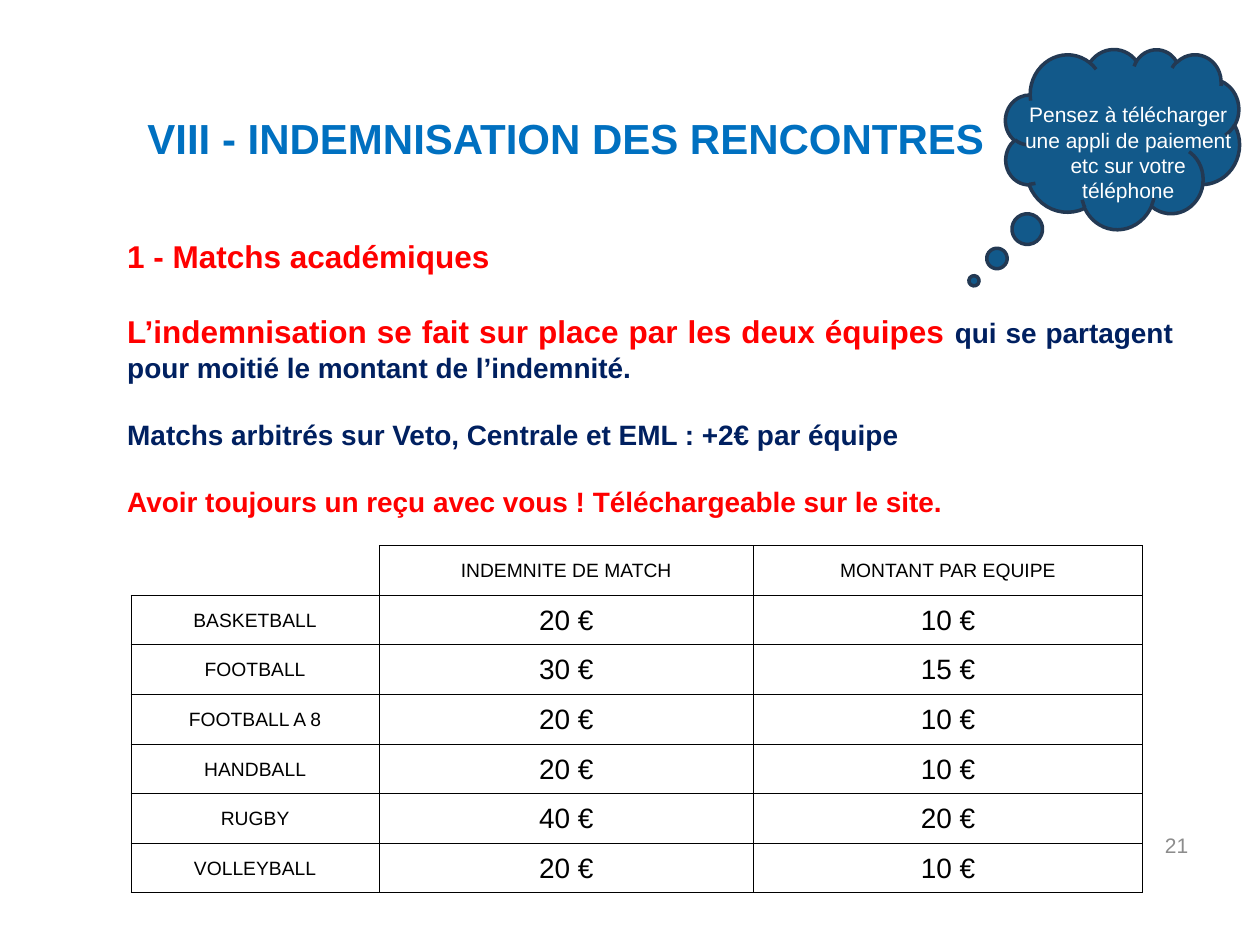
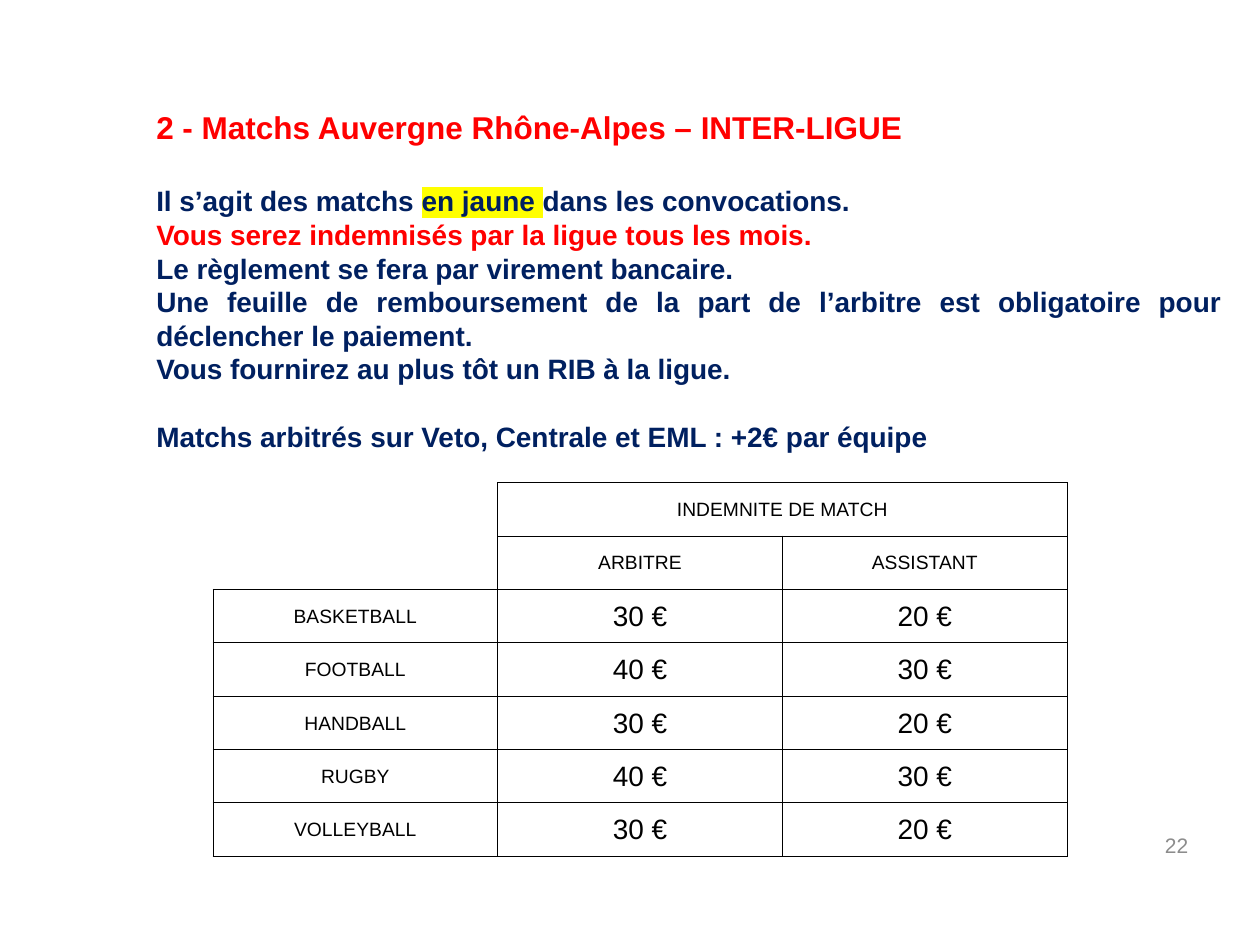
import lxml.etree
import pptx
import pptx.dml.color
import pptx.enum.shapes
import pptx.enum.text
import pptx.oxml.ns
import pptx.util
from dataclasses import dataclass

Inches = pptx.util.Inches
Pt = pptx.util.Pt
qn = pptx.oxml.ns.qn
Align = pptx.enum.text.PP_ALIGN
Anchor = pptx.enum.text.MSO_ANCHOR


@dataclass(frozen=True)
class Theme:
    font: str = "Arial"
    title_blue: str = "0070C0"
    red: str = "FF0000"
    navy: str = "002060"
    black: str = "000000"
    white: str = "FFFFFF"
    grey: str = "8C8C8C"
    yellow: str = "FFFF00"
    cloud_fill: str = "12598A"
    cloud_line: str = "233953"
    title_size: int = 24
    heading_size: int = 18
    body_size: int = 16
    note_size: int = 12
    label_size: int = 11
    line_factor: float = 1.2
    border: float = 0.5


THEME = Theme()

# Content
HEADING = dict(size=THEME.heading_size, color=THEME.red, bold=True)
NAVY = dict(size=THEME.body_size, color=THEME.navy, bold=True)
RED = dict(NAVY, color=THEME.red)
MARKED = dict(NAVY, highlight=THEME.yellow)
EXTRA_FEE = "Matchs arbitrés sur Veto, Centrale et EML : +2€ par équipe"
CLOUD_TEXT = "Pensez à télécharger une appli de paiement etc sur votre téléphone"

# A paragraph is (size of the empty line above it, its spans)
SLIDES = [
    dict(
        number="21",
        title="VIII - INDEMNISATION DES RENCONTRES",
        title_at=(1.07, 0.84, 6.85, 0.5),
        title_format=dict(size=THEME.title_size, color=THEME.title_blue, bold=True),
        body_at=(0.91, 1.83, 8.5, 2.36),
        body=[
            (0, [("1 - Matchs académiques", HEADING)]),
            (THEME.heading_size, [
                ("L’indemnisation se fait sur place par les deux équipes ", HEADING),
                ("qui se partagent pour moitié le montant de l’indemnité.", NAVY),
            ]),
            (THEME.body_size, [(EXTRA_FEE, NAVY)]),
            (THEME.body_size, [
                ("Avoir toujours un reçu avec vous ! Téléchargeable sur le site.", RED),
            ]),
        ],
        table_at=(1.04, 4.33),
        columns=(1.97, 2.97, 3.09),
        row_height=0.394,
        merges=[],
        rows=[
            ("", "INDEMNITE DE MATCH", "MONTANT PAR EQUIPE"),
            ("BASKETBALL", "20 €", "10 €"),
            ("FOOTBALL", "30 €", "15 €"),
            ("FOOTBALL A 8", "20 €", "10 €"),
            ("HANDBALL", "20 €", "10 €"),
            ("RUGBY", "40 €", "20 €"),
            ("VOLLEYBALL", "20 €", "10 €"),
        ],
    ),
    dict(
        number="22",
        title="2 - Matchs Auvergne Rhône-Alpes – INTER-LIGUE",
        title_at=(1.14, 0.81, 8.66, 0.4),
        title_format=HEADING,
        body_at=(1.14, 1.41, 8.66, 2.4),
        body=[
            (0, [
                ("Il s’agit des matchs ", NAVY),
                ("en jaune ", MARKED),
                ("dans les convocations.", NAVY),
            ]),
            (0, [("Vous serez indemnisés par la ligue tous les mois.", RED)]),
            (0, [("Le règlement se fera par virement bancaire.", NAVY)]),
            (0, [("Une feuille de remboursement de la part de l’arbitre est "
                  "obligatoire pour déclencher le paiement.", NAVY)]),
            (0, [("Vous fournirez au plus tôt un RIB à la ligue.", NAVY)]),
            (THEME.body_size, [(EXTRA_FEE, NAVY)]),
        ],
        table_at=(1.69, 3.83),
        columns=(2.26, 2.26, 2.26),
        row_height=0.424,
        merges=[((0, 1), (0, 2))],
        rows=[
            ("", "INDEMNITE DE MATCH", ""),
            ("", "ARBITRE", "ASSISTANT"),
            ("BASKETBALL", "30 €", "20 €"),
            ("FOOTBALL", "40 €", "30 €"),
            ("HANDBALL", "30 €", "20 €"),
            ("RUGBY", "40 €", "30 €"),
            ("VOLLEYBALL", "30 €", "20 €"),
        ],
    ),
]


# Text helpers
def rgb(color):
    return pptx.dml.color.RGBColor.from_string(color)


def write(para, text, size=THEME.body_size, color=THEME.black, bold=False,
          align=None, highlight=None):
    if align is not None:
        para.alignment = align
    span = para.add_run()
    span.text = text
    span.font.size = Pt(size)
    span.font.bold = bold
    span.font.color.rgb = rgb(color)
    span.font.name = THEME.font
    if highlight:
        mark = lxml.etree.Element(qn("a:highlight"))
        lxml.etree.SubElement(mark, qn("a:srgbClr")).set("val", highlight)
        span.font._element.find(qn("a:solidFill")).addnext(mark)


def place(shape, at):
    shape.left, shape.top, shape.width, shape.height = map(Inches, at)


def prepare(frame, anchor=Anchor.TOP):
    frame.word_wrap = True
    frame.auto_size = pptx.enum.text.MSO_AUTO_SIZE.NONE
    frame.vertical_anchor = anchor
    return frame


def add_text(page, at, text, anchor=Anchor.TOP, **style):
    box = page.shapes.add_textbox(*map(Inches, at))
    write(prepare(box.text_frame, anchor).paragraphs[0], text, **style)


# Slide parts
def fill_title(page, content):
    title = page.shapes.title
    place(title, content["title_at"])
    write(prepare(title.text_frame).paragraphs[0], content["title"],
          align=Align.LEFT, **content["title_format"])


def fill_body(page, content):
    body = page.placeholders[1]
    place(body, content["body_at"])
    frame = prepare(body.text_frame)
    for index, (gap, spans) in enumerate(content["body"]):
        para = frame.add_paragraph() if index else frame.paragraphs[0]
        properties = para._p.get_or_add_pPr()
        properties.set("marL", "0")
        properties.set("indent", "0")
        lxml.etree.SubElement(properties, qn("a:buNone"))
        para.space_before = Pt(gap * THEME.line_factor)
        for text, style in spans:
            write(para, text, align=Align.JUSTIFY, **style)


def set_borders(cell):
    properties = cell._tc.get_or_add_tcPr()
    for index, side in enumerate(("a:lnL", "a:lnR", "a:lnT", "a:lnB")):
        line = lxml.etree.Element(qn(side))
        line.set("w", str(Pt(THEME.border)))
        fill = lxml.etree.SubElement(line, qn("a:solidFill"))
        lxml.etree.SubElement(fill, qn("a:srgbClr")).set("val", THEME.black)
        properties.insert(index, line)


def add_fee_table(page, content):
    rows, columns = content["rows"], content["columns"]
    left, top = content["table_at"]
    at = (left, top, sum(columns), content["row_height"] * len(rows))
    table = page.shapes.add_table(len(rows), len(columns), *map(Inches, at)).table
    table.first_row = table.horz_banding = False
    # The "No Style, No Grid" table style
    table._tbl.tblPr.find(qn("a:tableStyleId")).text = \
        "{2D5ABB26-0587-4C30-8999-92F81FD0307C}"
    for column, width in zip(table.columns, columns):
        column.width = Inches(width)
    for first, last in content["merges"]:
        table.cell(*first).merge(table.cell(*last))
    for r, row in enumerate(rows):
        table.rows[r].height = Inches(content["row_height"])
        for c, text in enumerate(row):
            cell = table.cell(r, c)
            cell.margin_left = cell.margin_right = cell.margin_top = Inches(0.01)
            cell.margin_bottom = 0
            cell.vertical_anchor = Anchor.MIDDLE
            cell.fill.background()
            if text:
                size = THEME.body_size if "€" in text else THEME.label_size
                write(cell.text_frame.paragraphs[0], text, size=size,
                      align=Align.CENTER)
            if text or cell.is_spanned:
                set_borders(cell)


def add_cloud(page):
    cloud = page.shapes.add_shape(
        pptx.enum.shapes.MSO_SHAPE.CLOUD_CALLOUT,
        *map(Inches, (7.97, 0.36, 1.87, 1.46)))
    cloud.rotation = 7.3
    cloud.adjustments[0] = -0.546
    cloud.adjustments[1] = 0.876
    cloud.shadow.inherit = False
    cloud.fill.solid()
    cloud.fill.fore_color.rgb = rgb(THEME.cloud_fill)
    cloud.line.color.rgb = rgb(THEME.cloud_line)
    cloud.line.width = Pt(2)
    add_text(page, (8.03, 0.76, 1.85, 0.91), CLOUD_TEXT, size=THEME.note_size,
             color=THEME.white, align=Align.CENTER)


def main():
    deck = pptx.Presentation()
    deck.slide_width, deck.slide_height = Inches(10), Inches(7.5)
    for content in SLIDES:
        page = deck.slides.add_slide(deck.slide_layouts[1])
        add_text(page, (7.2, 6.51, 2.33, 0.4), content["number"], Anchor.MIDDLE,
                 size=THEME.note_size, color=THEME.grey, align=Align.RIGHT)
        fill_title(page, content)
        fill_body(page, content)
        add_fee_table(page, content)
    add_cloud(deck.slides[0])
    deck.save("out.pptx")


if __name__ == "__main__":
    main()
